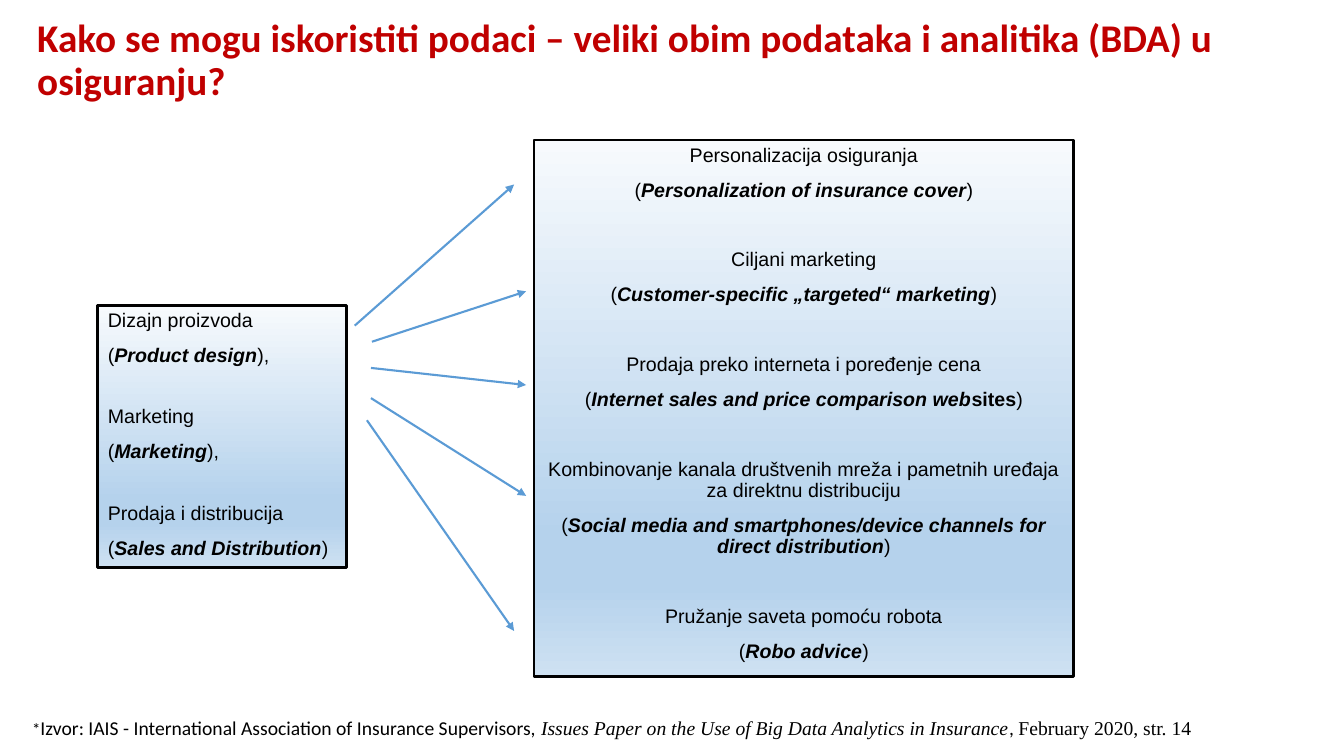
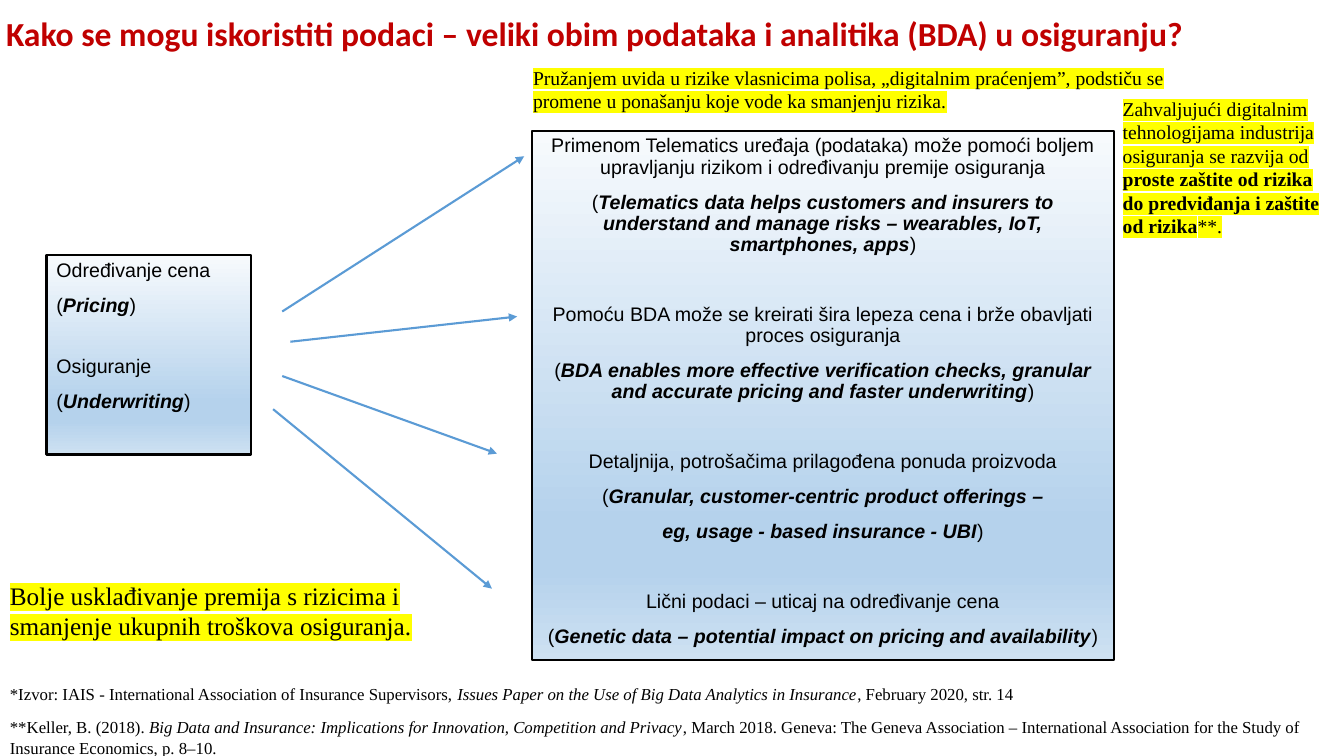
from copy import deepcopy

from lxml import etree
from pptx import Presentation
from pptx.dml.color import RGBColor
from pptx.enum import shapes, text
from pptx.oxml import ns
from pptx.util import Pt

RED = RGBColor(0xC0, 0x00, 0x00)
BLACK = RGBColor(0x00, 0x00, 0x00)
BLUE = RGBColor(0x5B, 0x9B, 0xD5)
ICE = RGBColor(0xF7, 0xFA, 0xFD)
SKY = RGBColor(0xB5, 0xD2, 0xEC)
MIST = RGBColor(0xCE, 0xE1, 0xF2)
YELLOW = RGBColor(0xFF, 0xFF, 0x00)

STOPS = [(0, ICE), (0.74, SKY), (0.83, SKY), (1, MIST)]
SANS, HEAD, SERIF = "Arial", "Calibri", "Times New Roman"
LEFT, CENTER = text.PP_ALIGN.LEFT, text.PP_ALIGN.CENTER
TITLE = "Kako se mogu iskoristiti podaci – veliki obim podataka i analitika (BDA) u osiguranju?"
SOURCE = "Izvor: IAIS - International Association of Insurance Supervisors, "
PAPER = "Issues Paper on the Use of Big Data Analytics in Insurance"
ISSUED = "February 2020, str. 14"


def write(p, content, size, font, style="", color=BLACK, marker=None):
    r = p.add_run()
    r.text = content
    r.font.size = Pt(size)
    r.font.name = font
    r.font.bold = "b" in style
    r.font.italic = "i" in style
    r.font.color.rgb = color
    if marker is not None:
        rPr = r.font._element
        highlight = etree.Element(ns.qn("a:highlight"))
        etree.SubElement(highlight, ns.qn("a:srgbClr"), val=str(marker))
        rPr.find(ns.qn("a:solidFill")).addnext(highlight)


def fill_panel(sp, groups, align, gap):
    sp.fill.gradient()
    gradient = sp._element.spPr.find(ns.qn("a:gradFill"))
    stop_list = gradient.find(ns.qn("a:gsLst"))
    while len(stop_list) < len(STOPS):
        stop_list.append(deepcopy(stop_list[0]))
    for stop, (position, color) in zip(sp.fill.gradient_stops, STOPS):
        stop.position = position
        stop.color.rgb = color
    sp.fill.gradient_angle = 270
    sp.line.color.rgb = BLACK
    sp.line.width = Pt(1.75)
    tf = sp.text_frame
    tf.word_wrap = True
    tf.auto_size = text.MSO_AUTO_SIZE.NONE
    tf.vertical_anchor = text.MSO_ANCHOR.TOP
    for g, group in enumerate(groups):
        for i, pieces in enumerate(group):
            p = tf.paragraphs[0] if g == i == 0 else tf.add_paragraph()
            p.alignment = align
            p.line_spacing = 0.9
            p.space_before = Pt(gap if g and not i else 10)
            pPr = p._p.get_or_add_pPr()
            pPr.set("marL", "0")
            pPr.set("indent", "0")
            etree.SubElement(pPr, ns.qn("a:buNone"))
            for content, style in pieces:
                write(p, content, 14, SANS, style)


SLIDES = [
    {
        "title": (19.4, 28.8, 28),
        "areas": (69.8, 218.2, 177.8, 187.2),
        "area_groups": [
            [[("Dizajn proizvoda", "")], [("(", ""), ("Product design", "bi"), ("),", "")]],
            [[("Marketing", "")], [("(", ""), ("Marketing", "bi"), ("),", "")]],
            [[("Prodaja i distribucija", "")],
             [("(", ""), ("Sales and Distribution", "bi"), (")", "")]],
        ],
        "uses": (381.6, 100.1, 385.2, 383),
        "use_groups": [
            [[("Personalizacija osiguranja", "")],
             [("(", ""), ("Personalization of insurance cover", "bi"), (")", "")]],
            [[("Ciljani marketing", "")],
             [("(", ""), ("Customer-specific „targeted“ marketing", "bi"), (")", "")]],
            [[("Prodaja preko interneta i poređenje cena", "")],
             [("(", ""), ("Internet sales and price comparison web", "bi"),
              ("sites", "b"), (")", "")]],
            [[("Kombinovanje kanala društvenih mreža i pametnih uređaja "
               "za direktnu distribuciju", "")],
             [("(", ""), ("Social media and smartphones/device channels for "
                          "direct distribution", "bi"), (")", "")]],
            [[("Pružanje saveta pomoću robota", "")],
             [("(", ""), ("Robo advice", "bi"), (")", "")]],
        ],
        "arrows": [
            (253.4, 232.6, 367.2, 131.8),
            (265.7, 244.1, 375.8, 208.1),
            (265, 262.8, 375.8, 275),
            (265, 284.4, 375.8, 354.2),
            (262.1, 300.2, 367.2, 450.7),
        ],
        "sources": (15.8, 506.9, 915.1, 25.2),
        "source_lines": [
            [("*", 12, HEAD, ""), (SOURCE, 14, HEAD, ""), (PAPER, 14, SERIF, "i"),
             (", ", 14, HEAD, ""), (ISSUED, 14, SERIF, "")],
        ],
        "remarks": [],
    },
    {
        "title": (-2.9, 10.1, 24),
        "areas": (33.1, 182.2, 146.2, 142.6),
        "area_groups": [
            [[("Određivanje cena", "")], [("(", ""), ("Pricing", "bi"), (")", "")]],
            [[("Osiguranje", "")], [("(", ""), ("Underwriting", "bi"), (")", "")]],
        ],
        "uses": (380.2, 93.6, 415.4, 378),
        "use_groups": [
            [[("Primenom Telematics uređaja (podataka) može pomoći boljem "
               "upravljanju rizikom i određivanju premije osiguranja", "")],
             [("(", ""), ("Telematics data helps customers and insurers to understand and "
                          "manage risks – wearables, IoT, smartphones, apps", "bi"), (")", "")]],
            [[("Pomoću BDA može se kreirati šira lepeza cena i brže obavljati "
               "proces osiguranja", "")],
             [("(", ""), ("BDA enables more effective verification checks, granular and "
                          "accurate pricing and faster underwriting", "bi"), (")", "")]],
            [[("Detaljnija, potrošačima prilagođena ponuda proizvoda", "")],
             [("(", ""), ("Granular, customer-centric product offerings –", "bi")],
             [("eg, usage - based insurance - UBI", "bi"), (")", "")]],
            [[("Lični podaci – uticaj na određivanje cena", "")],
             [("(", ""), ("Genetic data – potential impact on pricing and availability", "bi"),
              (")", "")]],
        ],
        "arrows": [
            (201.6, 222.5, 374.4, 111.6),
            (207.4, 244.1, 369.4, 226.1),
            (201.6, 268.6, 355, 324),
            (195.1, 292.3, 351.4, 420.5),
        ],
        "sources": (0, 483.8, 940.3, 61.9),
        "source_lines": [
            [("*" + SOURCE, 12, SERIF, ""), (PAPER, 12, SERIF, "i"),
             (", " + ISSUED, 12, SERIF, "")],
            [("**Keller, B. (2018). ", 12, SERIF, ""),
             ("Big Data and Insurance: Implications for Innovation, "
              "Competition and Privacy", 12, SERIF, "i"),
             (", March 2018. Geneva: The Geneva Association – International Association "
              "for the Study of Insurance Economics, p. 8–10.", 12, SERIF, "")],
        ],
        "remarks": [
            ((0, 411.1, 361.4, 51.1), 18,
             [("Bolje usklađivanje premija s rizicima i smanjenje ukupnih "
               "troškova osiguranja.", "")]),
            ((373.7, 43.2, 480.2, 41), 14,
             [("Pružanjem uvida u rizike vlasnicima polisa, „digitalnim praćenjem”, "
               "podstiču se promene u ponašanju koje vode ka smanjenju rizika.", "")]),
            ((794.9, 65.5, 165.6, 108.7), 14,
             [("Zahvaljujući digitalnim tehnologijama industrija osiguranja se razvija od ", ""),
              ("proste zaštite od rizika do predviđanja i zaštite od rizika", "b"),
              ("**.", "")]),
        ],
    },
]

prs = Presentation()
prs.slide_width, prs.slide_height = Pt(960), Pt(540)

for page in SLIDES:
    s = prs.slides.add_slide(prs.slide_layouts[1])

    x, y, size = page["title"]
    sp = s.shapes.title
    sp.left, sp.top, sp.width, sp.height = Pt(x), Pt(y), Pt(932.4), Pt(30.2)
    tf = sp.text_frame
    tf.word_wrap = True
    tf.auto_size = text.MSO_AUTO_SIZE.NONE
    tf.vertical_anchor = text.MSO_ANCHOR.MIDDLE
    p = tf.paragraphs[0]
    p.alignment = LEFT
    p.line_spacing = 0.9
    write(p, TITLE, size, HEAD, "b", RED)

    sp = s.placeholders[1]
    sp.left, sp.top, sp.width, sp.height = [Pt(v) for v in page["areas"]]
    fill_panel(sp, page["area_groups"], LEFT, 28.5)

    sp = s.shapes.add_shape(shapes.MSO_SHAPE.RECTANGLE, *[Pt(v) for v in page["uses"]])
    sp.shadow.inherit = False
    fill_panel(sp, page["use_groups"], CENTER, 34.5)

    for ends in page["arrows"]:
        arrow = s.shapes.add_connector(shapes.MSO_CONNECTOR.STRAIGHT, *[Pt(v) for v in ends])
        arrow.line.color.rgb = BLUE
        arrow.line.width = Pt(1.5)
        spPr = arrow._element.spPr
        etree.SubElement(spPr.find(ns.qn("a:ln")), ns.qn("a:tailEnd"), type="triangle")
        etree.SubElement(spPr, ns.qn("a:effectLst"))

    tf = s.shapes.add_textbox(*[Pt(v) for v in page["sources"]]).text_frame
    tf.word_wrap = True
    for i, line in enumerate(page["source_lines"]):
        p = tf.add_paragraph() if i else tf.paragraphs[0]
        p.line_spacing = 1.07
        p.space_after = Pt(8)
        for content, size, font, style in line:
            write(p, content, size, font, style)

    for box, size, pieces in page["remarks"]:
        tf = s.shapes.add_textbox(*[Pt(v) for v in box]).text_frame
        tf.word_wrap = True
        for content, style in pieces:
            write(tf.paragraphs[0], content, size, SERIF, style, marker=YELLOW)

prs.save("out.pptx")
